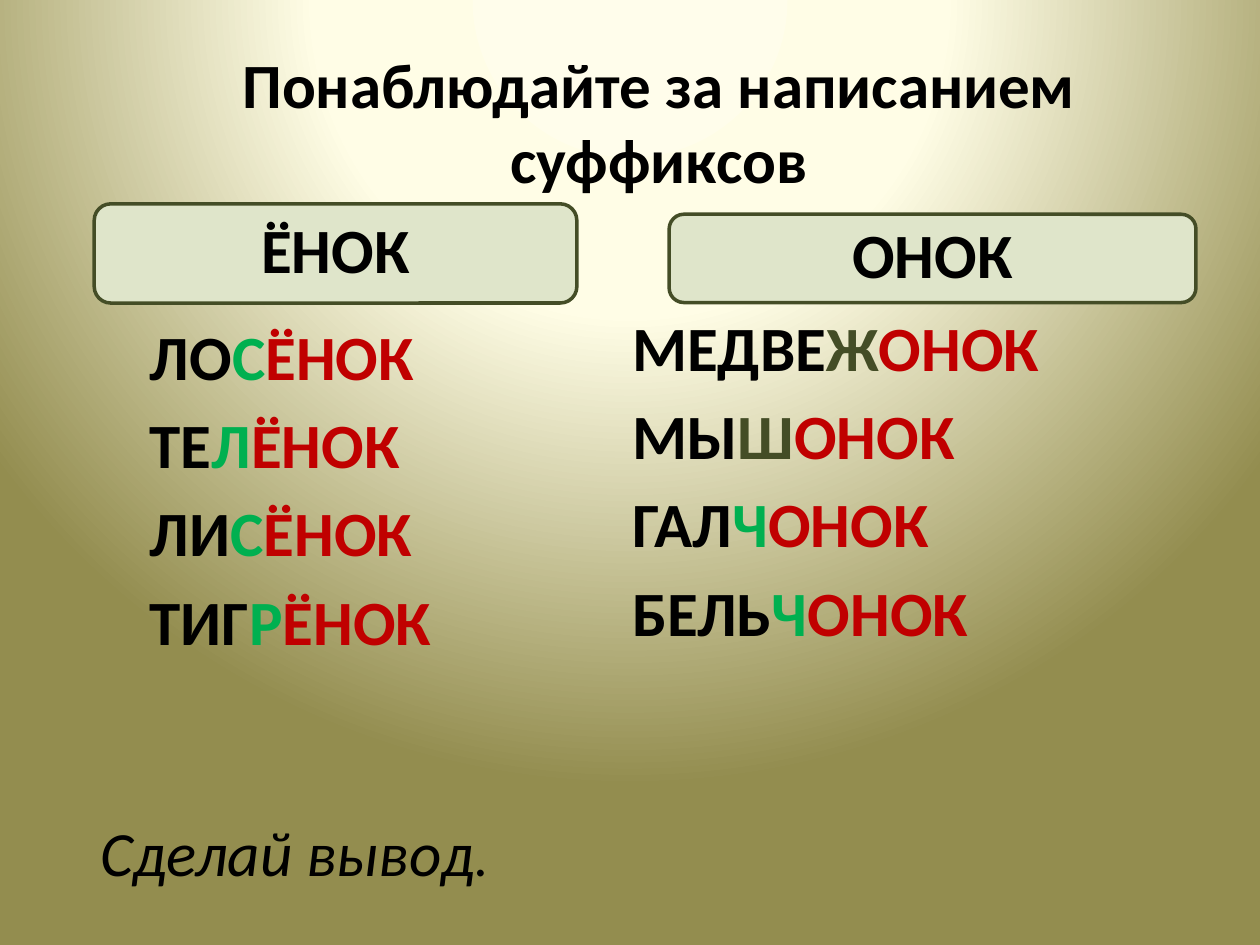
from dataclasses import dataclass

from pptx import Presentation
from pptx.dml.color import RGBColor
from pptx.enum.shapes import MSO_SHAPE
from pptx.enum.text import MSO_ANCHOR, PP_ALIGN
from pptx.oxml import parse_xml
from pptx.oxml.ns import nsdecls, qn
from pptx.util import Cm, Pt


@dataclass(frozen=True)
class Theme:
    face: str = "Calibri"
    size: int = 36
    small: int = 32
    ink: str = "000000"
    soft: str = "00B050"
    hard: str = "444D26"
    ending: str = "C00000"
    card: str = "DFE5CA"
    edge: str = "444D26"
    glow: tuple = ((0, "FFFDEB"), (40, "FFFDE6"), (100, "938D4F"))


THEME = Theme()
LEFT = [("ЛО", "С"), ("ТЕ", "Л"), ("ЛИ", "С"), ("ТИГ", "Р")]
RIGHT = [("МЕДВЕ", "Ж"), ("МЫ", "Ш"), ("ГАЛ", "Ч"), ("БЕЛЬ", "Ч")]


def apply(item, form):
    for name, value in form.items():
        setattr(item, name, value)


def paint(slide):
    """Fill the background with a round gradient centred above the slide."""
    slide.background.fill.gradient()
    old = next(slide.element.iter(qn("a:gradFill")))
    stops = "".join(
        f'<a:gs pos="{pos * 1000}"><a:srgbClr val="{tint}"/></a:gs>'
        for pos, tint in THEME.glow
    )
    new = parse_xml(
        f'<a:gradFill rotWithShape="1" {nsdecls("a")}><a:gsLst>{stops}</a:gsLst>'
        '<a:path path="circle"><a:fillToRect l="50000" t="-80000" '
        'r="50000" b="180000"/></a:path></a:gradFill>'
    )
    old.getparent().replace(old, new)


def write(para, text, tint=THEME.ink, **form):
    run = para.add_run()
    run.text = text
    base = {"name": THEME.face, "size": Pt(THEME.size)}
    apply(run.font, base | form)
    run.font.color.rgb = RGBColor.from_string(tint)


def add_text(slide, place, **form):
    frame = slide.shapes.add_textbox(*map(Cm, place)).text_frame
    apply(frame, {"word_wrap": True} | form)
    return frame


def add_card(slide, place, text):
    card = slide.shapes.add_shape(MSO_SHAPE.ROUNDED_RECTANGLE, *map(Cm, place))
    card.shadow.inherit = False
    card.fill.solid()
    card.fill.fore_color.rgb = RGBColor.from_string(THEME.card)
    card.line.color.rgb = RGBColor.from_string(THEME.edge)
    card.line.width = Pt(2)
    sides = ("left", "top", "right", "bottom")
    apply(card.text_frame, {f"margin_{side}": Cm(0.38) for side in sides})
    apply(card.text_frame, {"vertical_anchor": MSO_ANCHOR.MIDDLE, "word_wrap": True})
    para = card.text_frame.paragraphs[0]
    apply(para, {"alignment": PP_ALIGN.CENTER, "line_spacing": 0.9})
    write(para, text, bold=True)


def add_words(slide, place, inset, words, suffix):
    """List words as stem, marked consonant and suffix."""
    frame = add_text(slide, place, margin_left=Cm(inset), margin_top=Cm(0.28))
    for row, (stem, sound) in enumerate(words):
        para = frame.add_paragraph() if row else frame.paragraphs[0]
        if row:
            para.space_before = Pt(THEME.size * 0.2)
        mark = THEME.hard if sound in "ЖШ" else THEME.soft
        parts = ((stem, THEME.ink), (sound, mark), (suffix, THEME.ending))
        for text, tint in parts:
            write(para, text, tint, bold=True)


def main():
    deck = Presentation()
    apply(deck, {"slide_width": Cm(25.4), "slide_height": Cm(19.05)})
    slide = deck.slides.add_slide(deck.slide_layouts[6])
    paint(slide)

    add_card(slide, (1.9, 4.11, 9.73, 2), "ЁНОК")
    add_card(slide, (13.49, 4.32, 10.62, 1.78), "ОНОК")
    add_words(slide, (2.49, 6.12, 9.9, 10.8), 0.53, LEFT, "ЁНОК")
    add_words(slide, (11.91, 5.94, 12.7, 10.97), 0.84, RIGHT, "ОНОК")

    title = add_text(slide, (2.49, 0.79, 21.59, 3.33)).paragraphs[0]
    title.alignment = PP_ALIGN.CENTER
    write(title, "Понаблюдайте за написанием суффиксов", bold=True)

    task = add_text(slide, (1.78, 16.28, 15.75, 1.8)).paragraphs[0]
    write(task, "Сделай вывод", italic=True)
    write(task, ".", italic=True, size=Pt(THEME.small))

    deck.save("out.pptx")


if __name__ == "__main__":
    main()
